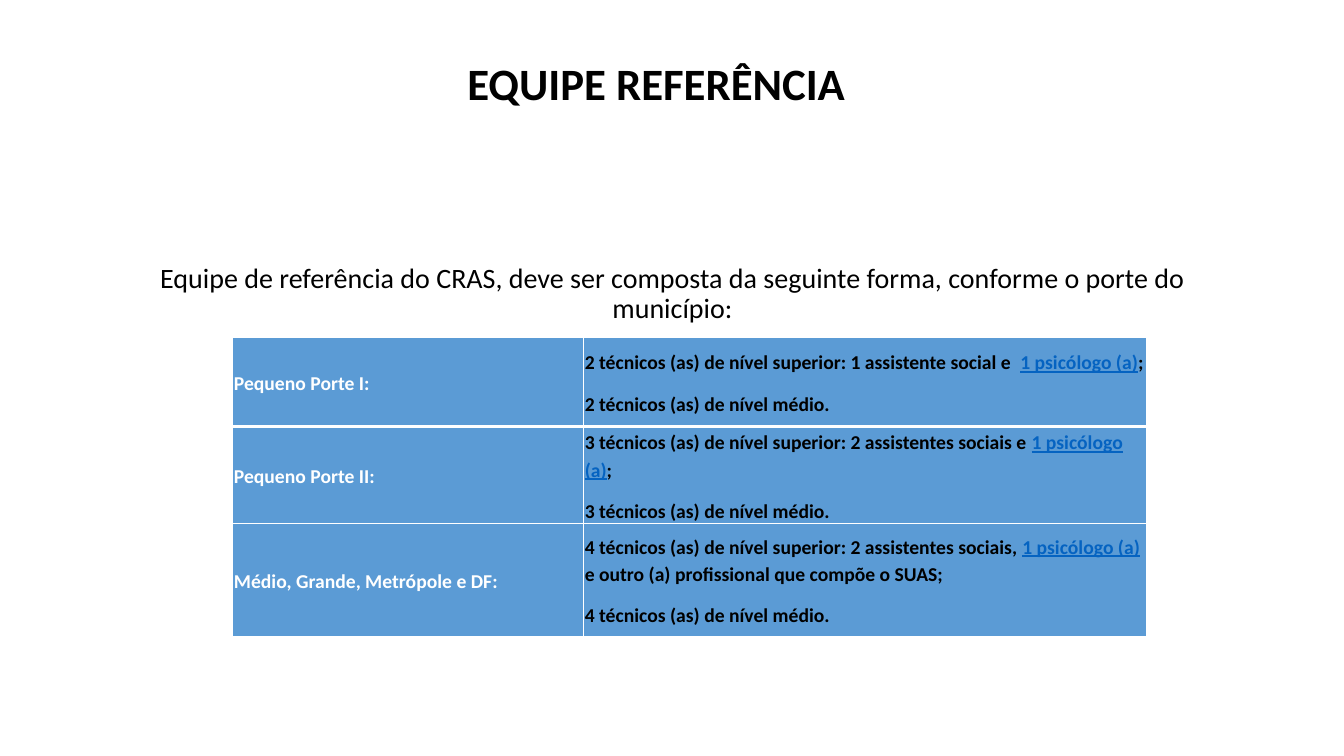
import pptx
import pptx.dml.color
import pptx.enum.text
import pptx.oxml.ns
import pptx.util
from lxml import etree

Inches = pptx.util.Inches
Pt = pptx.util.Pt
ALIGN = pptx.enum.text.PP_ALIGN
ANCHOR = pptx.enum.text.MSO_ANCHOR

BLACK = pptx.dml.color.RGBColor(0x00, 0x00, 0x00)
WHITE = pptx.dml.color.RGBColor(0xFF, 0xFF, 0xFF)
BLUE = pptx.dml.color.RGBColor(0x5B, 0x9B, 0xD5)
LINK_BLUE = pptx.dml.color.RGBColor(0x05, 0x63, 0xC1)

PSYCHOLOGIST = "1 psicólogo (a)"
TEAMS = [
    ("Pequeno Porte I:",
     "2 técnicos (as) de nível superior: 1 assistente social e  ", ";",
     "2 técnicos (as) de nível médio."),
    ("Pequeno Porte II:",
     "3 técnicos (as) de nível superior: 2 assistentes sociais e ", ";",
     "3 técnicos (as) de nível médio."),
    ("Médio, Grande, Metrópole e DF:",
     "4 técnicos (as) de nível superior: 2 assistentes sociais, ",
     " e outro (a) profissional que compõe o SUAS;",
     "4 técnicos (as) de nível médio."),
]
COLUMN_WIDTHS = (3.48, 5.58)
ROW_HEIGHTS = (0.88, 0.87, 1.12)


class Page:
    font_name = "Calibri"
    cell_size = 14
    cell_margin = 0.01

    def __init__(self, deck):
        self.slide = deck.slides.add_slide(deck.slide_layouts[6])

    def style(self, para, size, color, bold=False):
        para.font.name = self.font_name
        para.font.size = Pt(size)
        para.font.bold = bold
        para.font.color.rgb = color

    def text(self, place, text, size, anchor, bold=False, left_inset=0.1, top_inset=0.05):
        box = self.slide.shapes.add_textbox(*map(Inches, place))
        frame = box.text_frame
        frame.word_wrap = True
        frame.vertical_anchor = anchor
        frame.margin_left = Inches(left_inset)
        frame.margin_top = Inches(top_inset)
        para = frame.paragraphs[0]
        para.text = text
        para.alignment = ALIGN.CENTER
        para.line_spacing = 0.9
        self.style(para, size, BLACK, bold)

    def borders(self, cell, top, bottom):
        """Draw white cell edges, with top and bottom widths in points."""
        properties = cell._tc.get_or_add_tcPr()
        for side, width in (("L", 1), ("R", 1), ("T", top), ("B", bottom)):
            line = etree.SubElement(properties, pptx.oxml.ns.qn(f"a:ln{side}"), w=str(Pt(width)))
            fill = etree.SubElement(line, pptx.oxml.ns.qn("a:solidFill"))
            etree.SubElement(fill, pptx.oxml.ns.qn("a:srgbClr"), val=str(WHITE))

    def cell_paragraph(self, para, spans, color, space_after=0):
        for text in spans:
            span = para.add_run()
            span.text = text
            if text == PSYCHOLOGIST:
                span.font.color.rgb = LINK_BLUE
                span.font.underline = True
        para.line_spacing = 1.15
        para.space_after = Pt(space_after)
        self.style(para, self.cell_size, color, bold=True)

    def team_table(self, left, top):
        table = self.slide.shapes.add_table(
            len(TEAMS), len(COLUMN_WIDTHS), Inches(left), Inches(top),
            Inches(sum(COLUMN_WIDTHS)), Inches(sum(ROW_HEIGHTS))).table
        table.horz_banding = False
        for column, width in zip(table.columns, COLUMN_WIDTHS):
            column.width = Inches(width)
        for index, (label, graduates, ending, assistants) in enumerate(TEAMS):
            row = table.rows[index]
            row.height = Inches(ROW_HEIGHTS[index])
            for cell in row.cells:
                cell.margin_left = cell.margin_right = Inches(self.cell_margin)
                cell.margin_top = cell.margin_bottom = Inches(self.cell_margin)
                cell.vertical_anchor = ANCHOR.MIDDLE
                self.borders(cell, top=3 if index == 1 else 1, bottom=3 if index == 0 else 1)
                cell.fill.solid()
                cell.fill.fore_color.rgb = BLUE
            label_frame, team_frame = (cell.text_frame for cell in row.cells)
            self.cell_paragraph(label_frame.paragraphs[0], [label], WHITE, 10)
            self.cell_paragraph(team_frame.paragraphs[0],
                                [graduates, PSYCHOLOGIST, ending], BLACK, 10)
            self.cell_paragraph(team_frame.add_paragraph(), [assistants], BLACK)


def main():
    deck = pptx.Presentation()
    deck.slide_width = Inches(13.33)
    deck.slide_height = Inches(7.5)
    page = Page(deck)
    page.text((0, 0.13, 11.5, 1.45), "EQUIPE REFERÊNCIA", 32, ANCHOR.MIDDLE,
              bold=True, left_inset=1.62)
    page.text((0.92, 2, 11.5, 4.76),
              "Equipe de referência do CRAS, deve ser composta da seguinte forma, "
              "conforme o porte do município:", 20, ANCHOR.TOP, top_inset=0.62)
    page.team_table(2.31, 3.35)
    deck.save("out.pptx")


if __name__ == "__main__":
    main()
